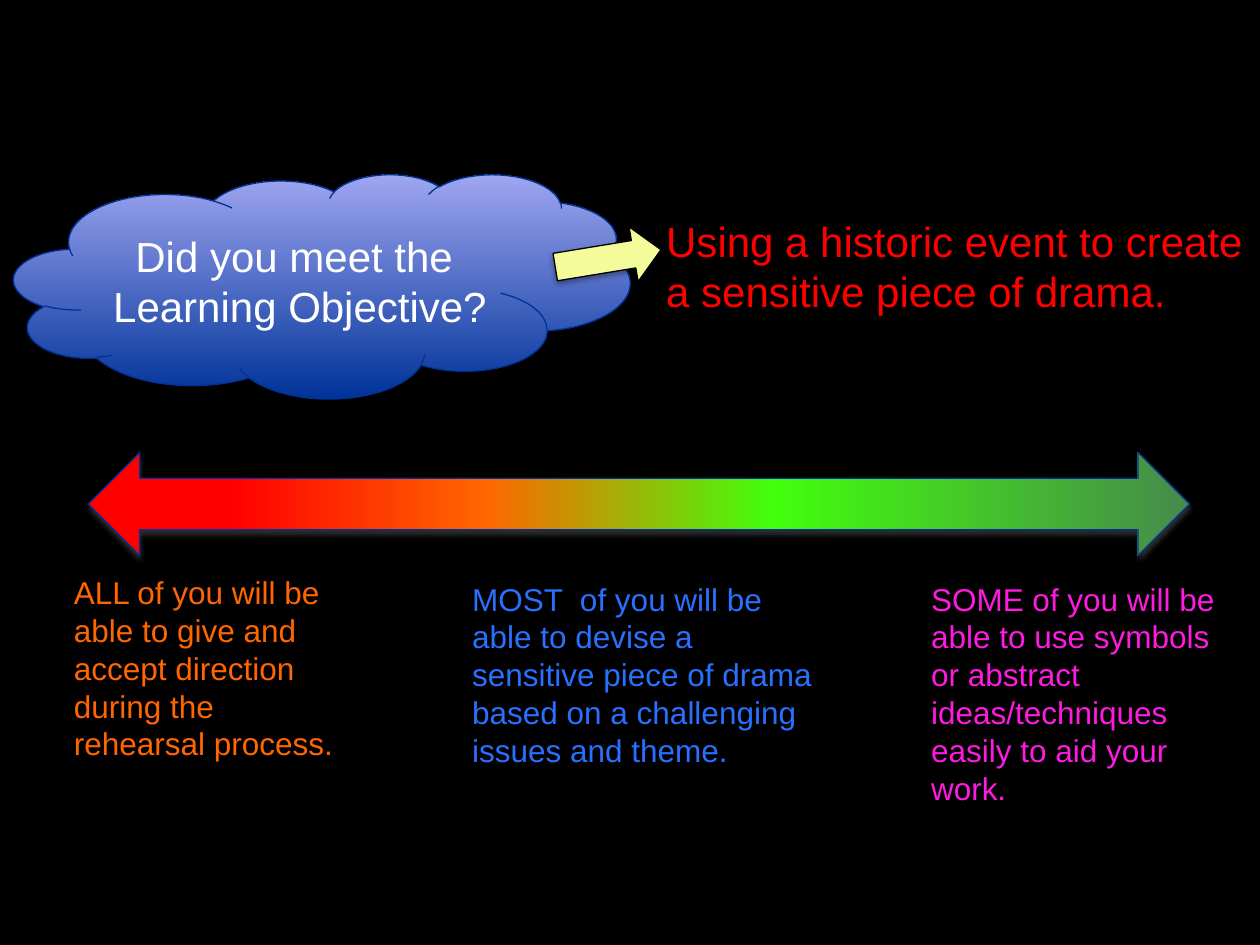
from lxml.etree import SubElement
from pptx import Presentation
from pptx.dml.color import RGBColor
from pptx.enum.shapes import MSO_SHAPE
from pptx.enum.text import MSO_ANCHOR, MSO_AUTO_SIZE, PP_ALIGN
from pptx.oxml.ns import qn
from pptx.util import Cm, Pt

COLORS = {
    "background": "000000",
    "objective": "FF0000",
    "question": "FFFFFF",
    "cloud_bottom": "003399",
    "cloud_top": "9FA6F1",
    "cloud_line": "003296",
    "scale_red": "FF0000",
    "scale_orange": "FF6600",
    "scale_lime": "42FF0C",
    "scale_green": "468A4B",
    "scale_line": "003099",
    "scale_shadow": "808080",
    "pointer": "F4FB9B",
    "black": "000000",
    "all": "FF6600",
    "most": "2970FF",
    "some": "FF1AE0",
}


def rgb(name):
    return RGBColor.from_string(COLORS[name])


def write_text(frame, text, size, color, align=PP_ALIGN.LEFT):
    frame.word_wrap = True
    frame.text = text
    for paragraph in frame.paragraphs:
        paragraph.alignment = align
        for run in paragraph.runs:
            run.font.name = "Arial"
            run.font.size = Pt(size)
            run.font.color.rgb = rgb(color)


def add_label(slide, box, text, size, color, auto_size=MSO_AUTO_SIZE.NONE):
    label = slide.shapes.add_textbox(*map(Cm, box))
    write_text(label.text_frame, text, size, color)
    label.text_frame.auto_size = auto_size


def add_color(parent, color, tag="a:srgbClr"):
    return SubElement(parent, qn(tag), val=COLORS[color])


def add_shadow(shape, color):
    shape.shadow.inherit = False
    effects = shape._element.spPr.find(qn("a:effectLst"))
    shadow = SubElement(
        effects, qn("a:outerShdw"), blurRad=str(Pt(3.1)), dist=str(Pt(1.8)),
        dir="5400000", rotWithShape="0",
    )
    SubElement(add_color(shadow, color), qn("a:alpha"), val="35000")


def fill_gradient(shape, stops, angle):
    shape.fill.gradient()
    shape.fill.gradient_angle = angle
    stop_list = shape._element.spPr.find(f".//{qn('a:gsLst')}")
    stop_list.clear()
    for percent, color in stops:
        add_color(SubElement(stop_list, qn("a:gs"), pos=str(percent * 1000)), color)


def add_outlined(slide, preset, box, line, shadow="black"):
    shape = slide.shapes.add_shape(preset, *map(Cm, box))
    shape.line.color.rgb = rgb(line)
    shape.line.width = Pt(0.75)
    add_shadow(shape, shadow)
    return shape


def add_scale(slide):
    scale = add_outlined(slide, MSO_SHAPE.LEFT_RIGHT_ARROW,
                         (1.78, 9.12, 22.2, 2.08), "scale_line", "scale_shadow")
    fill_gradient(scale, [(0, "scale_red"), (13, "scale_red"), (36, "scale_orange"),
                          (62, "scale_lime"), (100, "scale_green")], 0)


def add_question(slide):
    cloud = add_outlined(slide, MSO_SHAPE.CLOUD, (0.28, 3.51, 12.42, 4.52), "cloud_line")
    fill_gradient(cloud, [(0, "cloud_bottom"), (100, "cloud_top")], 90)
    cloud.text_frame.vertical_anchor = MSO_ANCHOR.MIDDLE
    write_text(cloud.text_frame, "Did you meet the \vLearning Objective?",
               24, "question", PP_ALIGN.CENTER)


def add_pointer(slide):
    pointer = add_outlined(slide, MSO_SHAPE.RIGHT_ARROW, (11.18, 4.65, 2.16, 1.12), "black")
    pointer.fill.solid()
    pointer.fill.fore_color.rgb = rgb("pointer")
    pointer.rotation = -9.3


def main():
    presentation = Presentation()
    presentation.slide_width, presentation.slide_height = Cm(25.4), Cm(19.05)
    slide = presentation.slides.add_slide(presentation.slide_layouts[6])
    slide.background.fill.solid()
    slide.background.fill.fore_color.rgb = rgb("background")

    add_label(slide, (13.18, 4.22, 12.45, 11.89),
              "Using a historic event to create a sensitive piece of drama.", 24, "objective")
    add_scale(slide)
    add_question(slide)
    add_pointer(slide)

    outcomes = [
        ("all", (1.24, 11.43, 5.87, 4.88),
         "ALL of you will be able to give and accept direction during the rehearsal process."),
        ("most", (9.27, 11.56, 7.44, 4.11),
         "MOST  of you will be able to devise a sensitive piece of drama "
         "based on a challenging issues and theme."),
        ("some", (18.52, 11.56, 6.38, 4.88),
         "SOME of you will be able to use symbols or abstract ideas/techniques "
         "easily to aid your work."),
    ]
    for color, box, outcome in outcomes:
        add_label(slide, box, outcome, 18, color, MSO_AUTO_SIZE.SHAPE_TO_FIT_TEXT)

    presentation.save("out.pptx")


if __name__ == "__main__":
    main()
